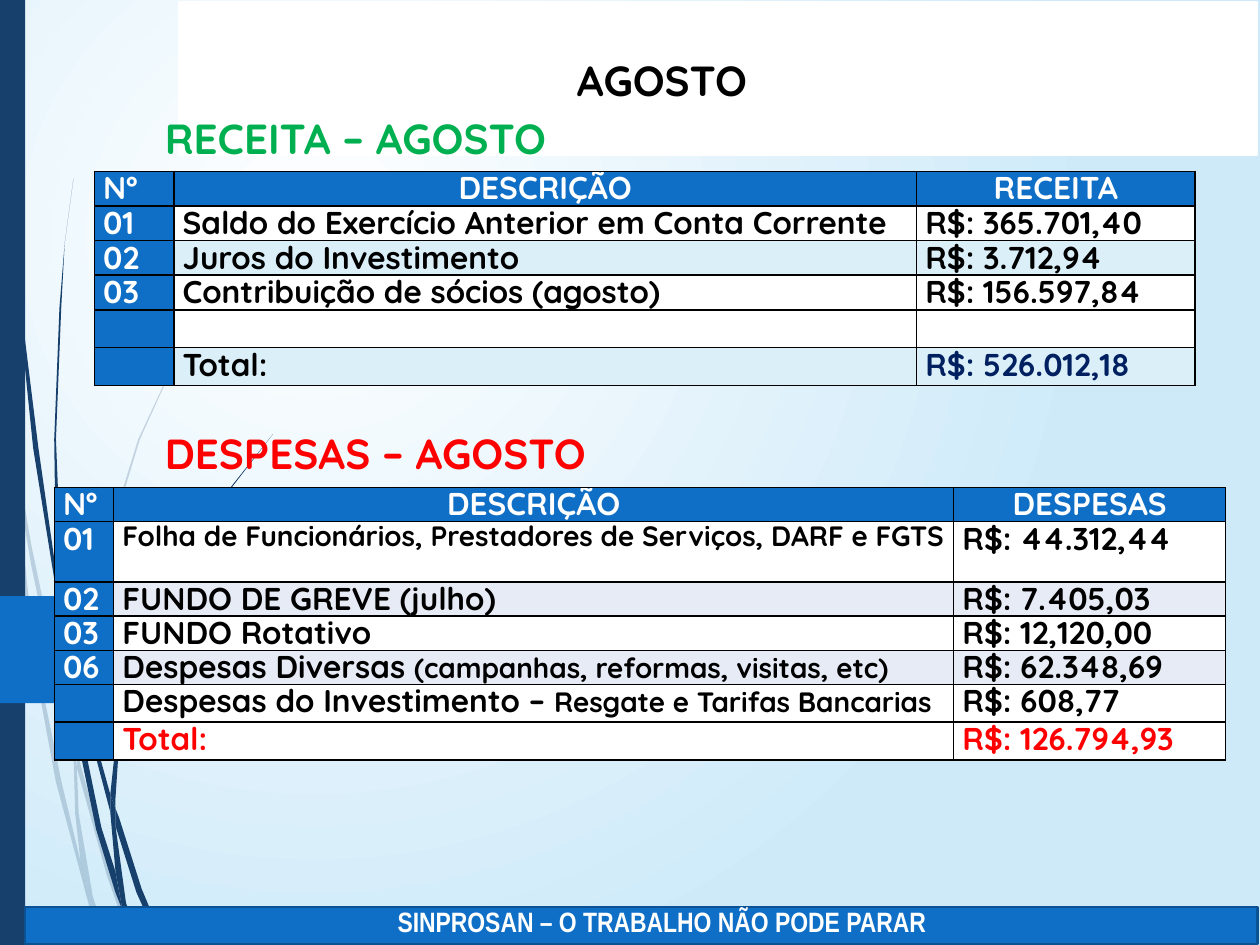
from lxml import etree
from pptx import Presentation
from pptx.dml.color import RGBColor
from pptx.enum.shapes import MSO_SHAPE
from pptx.enum.text import MSO_ANCHOR, PP_ALIGN
from pptx.oxml.ns import qn
from pptx.util import Pt

RECTANGLE, PENTAGON = MSO_SHAPE.RECTANGLE, MSO_SHAPE.PENTAGON
LEFT, CENTER = PP_ALIGN.LEFT, PP_ALIGN.CENTER
TOP, BOTTOM = MSO_ANCHOR.TOP, MSO_ANCHOR.BOTTOM

WHITE = RGBColor(0xFF, 0xFF, 0xFF)
BLACK = RGBColor(0x00, 0x00, 0x00)
NAVY = RGBColor(0x17, 0x40, 0x6D)
BLUE = RGBColor(0x0F, 0x6F, 0xC6)
EDGE_BLUE = RGBColor(0x0B, 0x52, 0x92)
SKY = RGBColor(0xCE, 0xEA, 0xF9)
PALE_BLUE = RGBColor(0xDB, 0xEF, 0xF9)
PALE_GREY = RGBColor(0xE7, 0xEB, 0xF5)
GREEN = RGBColor(0x00, 0xB0, 0x50)
RED = RGBColor(0xFF, 0x00, 0x00)
DARK_BLUE = RGBColor(0x00, 0x20, 0x60)

PALE_STRANDS = [
    [(5.8, 252), (4.3, 231.8), (0, 203), (0, 215.3), (5, 247.7)],
    [(28.8, 375.8), (42.5, 431.3), (42.5, 421.9), (31, 374.4), (18, 311.9),
     (7.2, 248.4), (8.6, 270.7), (17.9, 323.5)],
    [(46.1, 437), (43.9, 429.1), (43.9, 439.2), (61.2, 499.7), (74.9, 540),
     (77.8, 540), (63.4, 498.2)],
    [(5.8, 252), (13.7, 338.4), (22, 393), (32.4, 447.1), (46.1, 499),
     (50.4, 514.1), (46.1, 491.8), (34.6, 445.7), (23.8, 392.2),
     (15.8, 337.7), (8.6, 270.7)],
    [(41.8, 431.3), (43.2, 465.1), (46.1, 491.8), (50.4, 514.1), (56.9, 540),
     (61.9, 540), (52.6, 511.9), (45.4, 465.1), (43.9, 439.2), (42.5, 421.9)],
    [(43.9, 429.1), (43.9, 420.5), (47.4, 375.8), (54.7, 332.6), (79.9, 251.3),
     (114.5, 176.4), (134.6, 142.6), (156.2, 110.2), (133.9, 141.8),
     (113.8, 175.7), (79.2, 250.6), (54, 331.9), (46.1, 375.5), (42.5, 420.5)],
]
DARK_STRANDS = [
    [(1.4, 0), (3.6, 79.2), (10.1, 167.8), (19.4, 255.6), (33.1, 343.4),
     (33.8, 346.3), (32.4, 326.2), (21.6, 255.6), (10.8, 167), (4.3, 78.5),
     (2.2, 0)],
    [(36, 339.8), (38.2, 363.6), (52.6, 426.2), (63.4, 464.4), (63.4, 454.3),
     (55.4, 424.8), (44.6, 382.9)],
    [(65.5, 461.5), (65.5, 472.3), (78.5, 509.8), (90.7, 539.3), (93.6, 539.3),
     (81.4, 508.3), (67.7, 467.3)],
    [(33.8, 343.4), (40.3, 401), (55.4, 474.5), (66.2, 509.8), (69.8, 519.8),
     (65.5, 497.5), (58.3, 473), (43.2, 400.3), (38.2, 363.6)],
    [(41.8, 101.5), (36.7, 139), (33.8, 176.4), (31, 251.3), (32.4, 323.3),
     (33.8, 343.4), (38.2, 363.6), (36, 339.8), (34.6, 326.2), (31.7, 251.3),
     (34.6, 176.4), (37.4, 139)],
    [(65.5, 461.5), (65.5, 455.8), (68.2, 426.3), (74.2, 397.4), (94.3, 342.7),
     (121.7, 292.3), (155.5, 247.7), (121, 291.6), (92.9, 341.3),
     (72.7, 396.7), (66.4, 426), (63.4, 454.3)],
    [(63.4, 454.3), (63.4, 464.4), (65.5, 497.5), (69.8, 519.8), (75.6, 539.3),
     (81.4, 539.3), (72, 516.2), (65.5, 472.3), (65.5, 461.5)],
]

INCOME = [
    ("Nº", "DESCRIÇÃO", "RECEITA"),
    ("01", "Saldo do Exercício Anterior em Conta Corrente", "R$: 365.701,40"),
    ("02", "Juros do Investimento", "R$: 3.712,94"),
    ("03", "Contribuição de sócios (agosto)", "R$: 156.597,84"),
    ("", "", ""),
    ("", "Total:", "R$: 526.012,18"),
]
# A description given as a pair is a normal part and a smaller part.
EXPENSES = [
    ("Nº", "DESCRIÇÃO", "DESPESAS"),
    ("01", ("", "Folha de Funcionários, Prestadores de Serviços, DARF e FGTS"),
     "R$: 44.312,44"),
    ("02", "FUNDO DE GREVE (julho)", "R$: 7.405,03"),
    ("03", "FUNDO Rotativo", "R$: 12,120,00"),
    ("06", ("Despesas Diversas ", "(campanhas, reformas, visitas, etc)"),
     "R$: 62.348,69"),
    ("", ("Despesas do Investimento – ", "Resgate e Tarifas Bancarias"),
     "R$: 608,77"),
    ("", "Total:", "R$: 126.794,93"),
]


class Report:
    font, body, small, heading = "Quicksand", 18, 16, 24

    def __init__(self, page):
        self.page = page

    def background(self):
        fill = self.page.background.fill
        fill.gradient()
        for stop, color in zip(fill.gradient_stops, (WHITE, SKY)):
            stop.color.rgb = color
        linear = next(self.page._element.iter(qn("a:lin")))
        radial = etree.Element(qn("a:path"), path="circle")
        etree.SubElement(radial, qn("a:fillToRect"),
                         l="50000", t="50000", r="100000", b="100000")
        linear.getparent().replace(linear, radial)

    def paint(self, shape, color, line=None):
        shape.shadow.inherit = False
        shape.fill.solid()
        shape.fill.fore_color.rgb = color
        if line is None:
            shape.line.fill.background()
        else:
            shape.line.color.rgb = line
            shape.line.width = Pt(1.25)
        return shape

    def block(self, kind, left, top, width, height, color, line=None):
        shape = self.page.shapes.add_shape(
            kind, Pt(left), Pt(top), Pt(width), Pt(height))
        return self.paint(shape, color, line)

    def strand(self, points, opacity=None):
        builder = self.page.shapes.build_freeform(*points[0], scale=Pt(1))
        builder.add_line_segments(points[1:], close=True)
        shape = self.paint(builder.convert_to_shape(), NAVY)
        if opacity:
            color = next(shape._element.spPr.iter(qn("a:srgbClr")))
            etree.SubElement(color, qn("a:alpha"), val=str(opacity * 1000))

    def style(self, para, size, color, align, font=None):
        para.alignment = align
        para.font.name = font or self.font
        para.font.size = Pt(size)
        para.font.bold = True
        para.font.color.rgb = color

    def text(self, words, left, top, width, height, color, align=LEFT,
             size=heading, anchor=BOTTOM, font=None):
        box = self.page.shapes.add_textbox(
            Pt(left), Pt(top), Pt(width), Pt(height))
        frame = box.text_frame
        frame.word_wrap = True
        frame.vertical_anchor = anchor
        para = frame.paragraphs[0]
        para.text = words
        self.style(para, size, color, align, font)

    def cell(self, cell, content, fill, color, align):
        cell.margin_left = cell.margin_right = Pt(5)
        cell.margin_top = cell.margin_bottom = 0
        for side in ("lnL", "lnR", "lnT", "lnB"):
            line = etree.SubElement(cell._tc.get_or_add_tcPr(),
                                    qn("a:" + side), w=str(Pt(1)))
            solid = etree.SubElement(line, qn("a:solidFill"))
            etree.SubElement(solid, qn("a:srgbClr"), val=str(BLACK))
        cell.fill.solid()
        cell.fill.fore_color.rgb = fill
        para = cell.text_frame.paragraphs[0]
        para.line_spacing = 0.9
        self.style(para, self.body, color, align)
        parts = (content, "") if isinstance(content, str) else content
        for words, size in zip(parts, (self.body, self.small)):
            if words:
                span = para.add_run()
                span.text = words
                span.font.size = Pt(size)

    def table(self, rows, left, top, widths, heights, band, total_colors):
        table = self.page.shapes.add_table(
            len(rows), len(widths), Pt(left), Pt(top),
            Pt(sum(widths)), Pt(sum(heights))).table
        table.first_row = table.horz_banding = False
        for column, width in zip(table.columns, widths):
            column.width = Pt(width)
        for r, (row, height) in enumerate(zip(rows, heights)):
            table.rows[r].height = Pt(height)
            banded = r % 2 == 0 and rows is EXPENSES and r < len(rows) - 1
            banded = banded or (rows is INCOME and r in (2, len(rows) - 1))
            for c, content in enumerate(row):
                fill, color = (band if banded else WHITE), BLACK
                if r == 0 or c == 0:
                    fill, color = BLUE, WHITE
                elif r == len(rows) - 1:
                    color = total_colors[c - 1]
                align = CENTER if r == 0 and c > 0 else LEFT
                self.cell(table.cell(r, c), content, fill, color, align)


def main():
    deck = Presentation()
    deck.slide_width, deck.slide_height = Pt(720), Pt(540)
    report = Report(deck.slides.add_slide(deck.slide_layouts[6]))
    report.background()
    for points in PALE_STRANDS:
        report.strand(points, opacity=20)
    for points in DARK_STRANDS:
        report.strand(points)
    report.block(RECTANGLE, 0, 0, 14.4, 540, NAVY)
    arrow = report.block(PENTAGON, -2, 340.6, 110, 61.2, BLUE)
    arrow.adjustments[0] = 0.48
    report.block(RECTANGLE, 102.2, 1.4, 616.3, 87.1, WHITE, WHITE)
    report.block(RECTANGLE, 14.4, 518.4, 704.2, 20.9, BLUE, EDGE_BLUE)
    report.text("SINPROSAN – O TRABALHO NÃO PODE PARAR", 181.4, 513.4, 393.8,
                26.6, WHITE, CENTER, 16, TOP, "Arial Narrow")
    report.text("RECEITA – AGOSTO", 87.1, 50.4, 483, 46, GREEN)
    report.text("DESPESAS – AGOSTO", 87.1, 230.4, 483, 46, RED)
    report.text("AGOSTO", 136.8, 17.3, 483, 46, BLACK, CENTER)
    report.table(INCOME, 54, 97.9, (45.4, 424.4, 159.2), [19.8] * 6,
                 PALE_BLUE, (BLACK, DARK_BLUE))
    report.table(EXPENSES, 31, 278.6, (34, 480, 155.4),
                 [19.4, 34.6] + [19.4] * 4 + [21.6], PALE_GREY, (RED, RED))
    deck.save("out.pptx")


if __name__ == "__main__":
    main()
